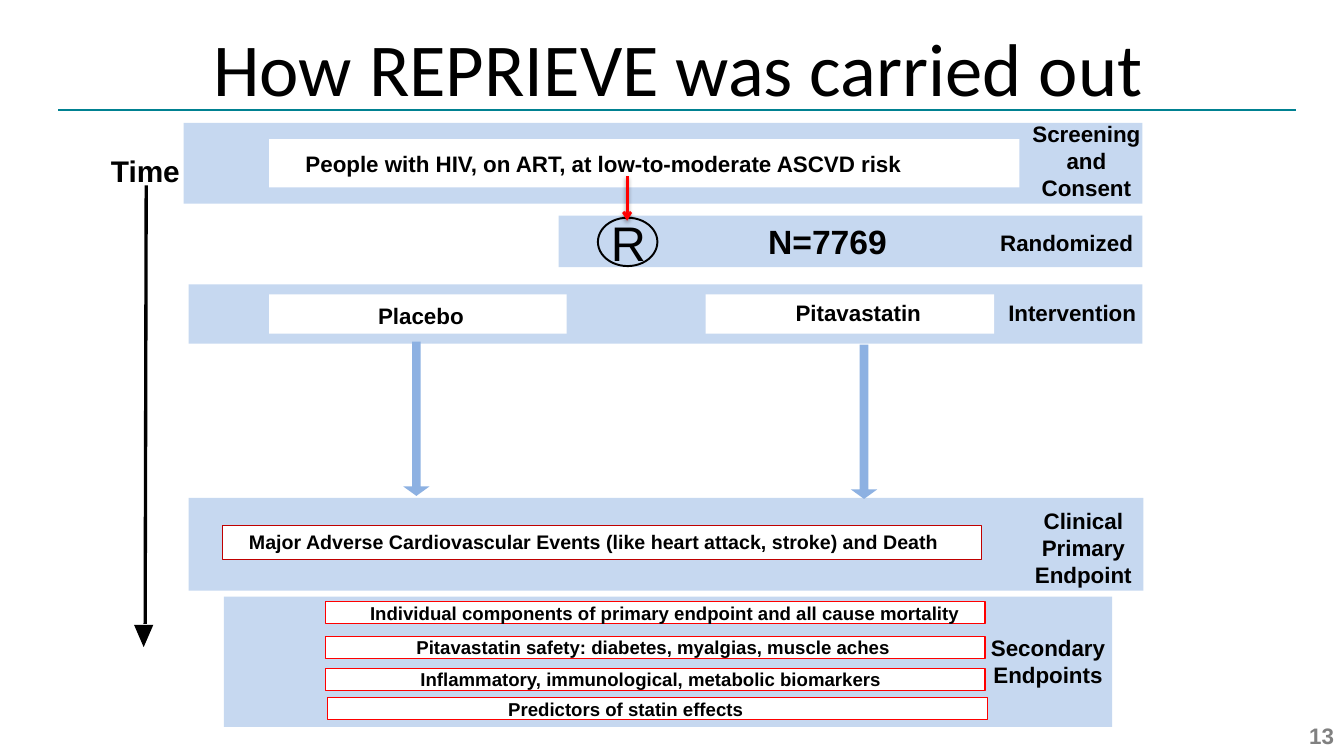
import pptx
import pptx.util
import pptx.dml.color
import pptx.enum.shapes
import pptx.enum.text
import pptx.oxml
import pptx.oxml.ns
from dataclasses import dataclass

Inches = pptx.util.Inches
Shape = pptx.enum.shapes.MSO_SHAPE
Align = pptx.enum.text.PP_ALIGN
Anchor = pptx.enum.text.MSO_ANCHOR


@dataclass(frozen=True)
class Theme:
    head_font: str = "Calibri"
    body_font: str = "Arial"
    black: str = "000000"
    white: str = "FFFFFF"
    band: str = "C6D8F0"
    arrow: str = "8DB1E2"
    red: str = "FF0000"
    dark_red: str = "C00000"
    teal: str = "008191"
    gray: str = "808080"
    title: float = 53.3
    letter: float = 34.7
    count: float = 24
    time: float = 21.3
    label: float = 16
    event: float = 14
    small: float = 13.3


def color(code):
    return pptx.dml.color.RGBColor.from_string(code)


class Board:
    def __init__(self, slide, theme):
        self.slide = slide
        self.theme = theme

    def label(self, shape, text, size, ink=None, font=None, bold=True,
              align=Align.LEFT, anchor=Anchor.TOP, wrap=False, inset=(0, 0)):
        frame = shape.text_frame
        frame.text = text
        frame.word_wrap = wrap
        frame.vertical_anchor = anchor
        frame.margin_left = frame.margin_right = Inches(inset[0])
        frame.margin_top = frame.margin_bottom = Inches(inset[1])
        for para in frame.paragraphs:
            para.alignment = align
            for run in para.runs:
                run.font.size = pptx.util.Pt(size)
                run.font.name = font or self.theme.body_font
                run.font.bold = bold
                run.font.color.rgb = color(ink or self.theme.black)

    def text(self, x, y, w, h, text, size=None, **style):
        box = self.slide.shapes.add_textbox(*map(Inches, (x, y, w, h)))
        self.label(box, text, size or self.theme.label, **style)

    def shape(self, x, y, w, h, fill=None, line=None, weight=0.75, kind=Shape.RECTANGLE):
        item = self.slide.shapes.add_shape(kind, *map(Inches, (x, y, w, h)))
        item.shadow.inherit = False
        if fill:
            item.fill.solid()
            item.fill.fore_color.rgb = color(fill)
        else:
            item.fill.background()
        if line:
            item.line.color.rgb = color(line)
            item.line.width = pptx.util.Pt(weight)
        else:
            item.line.fill.background()
        return item

    def drop(self, x, y):
        item = self.shape(x, y, 0.26, 1.53, self.theme.arrow, kind=Shape.DOWN_ARROW)
        item.adjustments[0] = 0.33
        item.adjustments[1] = 0.36

    def line(self, x1, y1, x2, y2, ink, weight, head=False, shade=False):
        item = self.slide.shapes.add_connector(
            pptx.enum.shapes.MSO_CONNECTOR.STRAIGHT, *map(Inches, (x1, y1, x2, y2)))
        item.line.color.rgb = color(ink)
        item.line.width = pptx.util.Pt(weight)
        space = pptx.oxml.ns.nsdecls("a")
        if head:
            item.line._get_or_add_ln().append(
                pptx.oxml.parse_xml(f'<a:tailEnd {space} type="arrow"/>'))
        cast = (f'<a:outerShdw blurRad="39370" dist="20320" dir="5400000">'
                f'<a:srgbClr val="{self.theme.black}"><a:alpha val="38000"/></a:srgbClr>'
                f'</a:outerShdw>') if shade else ""
        item._element.spPr.append(
            pptx.oxml.parse_xml(f'<a:effectLst {space}>{cast}</a:effectLst>'))


def main():
    deck = pptx.Presentation()
    deck.slide_width, deck.slide_height = Inches(13.33), Inches(7.5)
    theme = Theme()
    board = Board(deck.slides.add_slide(deck.slide_layouts[6]), theme)

    # Title and rule
    board.text(1.78, 0, 9.89, 1.33, "How REPRIEVE was carried out", theme.title,
               font=theme.head_font, bold=False, align=Align.CENTER,
               anchor=Anchor.MIDDLE, wrap=True, inset=(0.1, 0.05))
    board.line(0.58, 1.09, 12.85, 1.09, theme.teal, 1)

    # Stage bands
    for band in ((1.82, 1.22, 9.51, 0.8), (5.54, 2.14, 5.79, 0.51),
                 (1.87, 2.82, 9.46, 0.59), (1.87, 4.94, 9.47, 0.92),
                 (2.22, 5.92, 8.81, 1.29)):
        board.shape(*band, theme.band)

    # Stage names
    board.text(10.2, 1.19, 1.15, 0.81, "Screening\nand\nConsent", align=Align.CENTER)
    board.text(9.92, 2.27, 1.33, 0.27, "Randomized")
    board.text(10, 2.97, 1.28, 0.27, "Intervention")
    board.text(10.22, 5.03, 1.05, 0.81, "Clinical Primary\nEndpoint",
               align=Align.CENTER, wrap=True)
    board.text(9.71, 6.29, 1.37, 0.54, "Secondary Endpoints",
               align=Align.CENTER, wrap=True)

    # People and study arms
    for box in ((2.67, 1.38, 7.44, 0.48), (2.67, 2.92, 2.95, 0.39),
                (7, 2.92, 2.86, 0.39)):
        board.shape(*box, theme.white)
    board.text(3.03, 1.49, 5.99, 0.27,
               "People with HIV, on ART, at low-to-moderate ASCVD risk")
    board.text(3.75, 3, 0.86, 0.27, "Placebo")
    board.text(7.89, 2.97, 1.32, 0.27, "Pitavastatin")
    board.drop(4, 3.39)
    board.drop(8.44, 3.42)

    # Randomization
    board.text(6.06, 2.11, 0.35, 0.58, "R", theme.letter, bold=False)
    board.shape(5.93, 2.16, 0.59, 0.48, line=theme.black, weight=1.38, kind=Shape.OVAL)
    board.line(6.22, 1.75, 6.22, 2.19, theme.red, 2, head=True, shade=True)
    board.text(7.52, 2.14, 1.48, 0.5, "N=7769", theme.count, wrap=True, inset=(0.1, 0.05))

    # Time axis
    board.text(1.1, 1.52, 0.69, 0.36, "Time", theme.time)
    board.line(1.45, 1.84, 1.44, 6.19, theme.black, 2.38)
    board.shape(1.33, 6.2, 0.19, 0.22, theme.black, kind=Shape.FLOWCHART_MERGE)

    # Primary endpoint
    event = board.shape(2.21, 5.21, 7.53, 0.34, theme.white, theme.dark_red)
    board.label(event, "Major Adverse Cardiovascular Events (like heart attack, stroke) and Death",
                theme.event, wrap=True, inset=(0.26, 0.05))

    # Secondary endpoints: box left, top, text left, text width
    for x, y, left, width, goal in (
            (3.23, 5.97, 3.67, 5.92,
             "Individual components of primary endpoint and all cause mortality"),
            (3.23, 6.31, 4.13, 4.75, "Pitavastatin safety: diabetes, myalgias, muscle aches"),
            (3.23, 6.63, 4.17, 4.63, "Inflammatory, immunological, metabolic biomarkers"),
            (3.25, 6.92, 5.04, 2.36, "Predictors of statin effects")):
        board.shape(x, y, 6.54, 0.22, theme.white, theme.red)
        board.text(left, y, width, 0.22, goal, theme.small)

    # Page number
    board.text(11, 7.1, 2.33, 0.4, "13", ink=theme.gray, align=Align.RIGHT,
               anchor=Anchor.MIDDLE, wrap=True, inset=(0.1, 0.05))

    deck.save("out.pptx")


if __name__ == "__main__":
    main()
